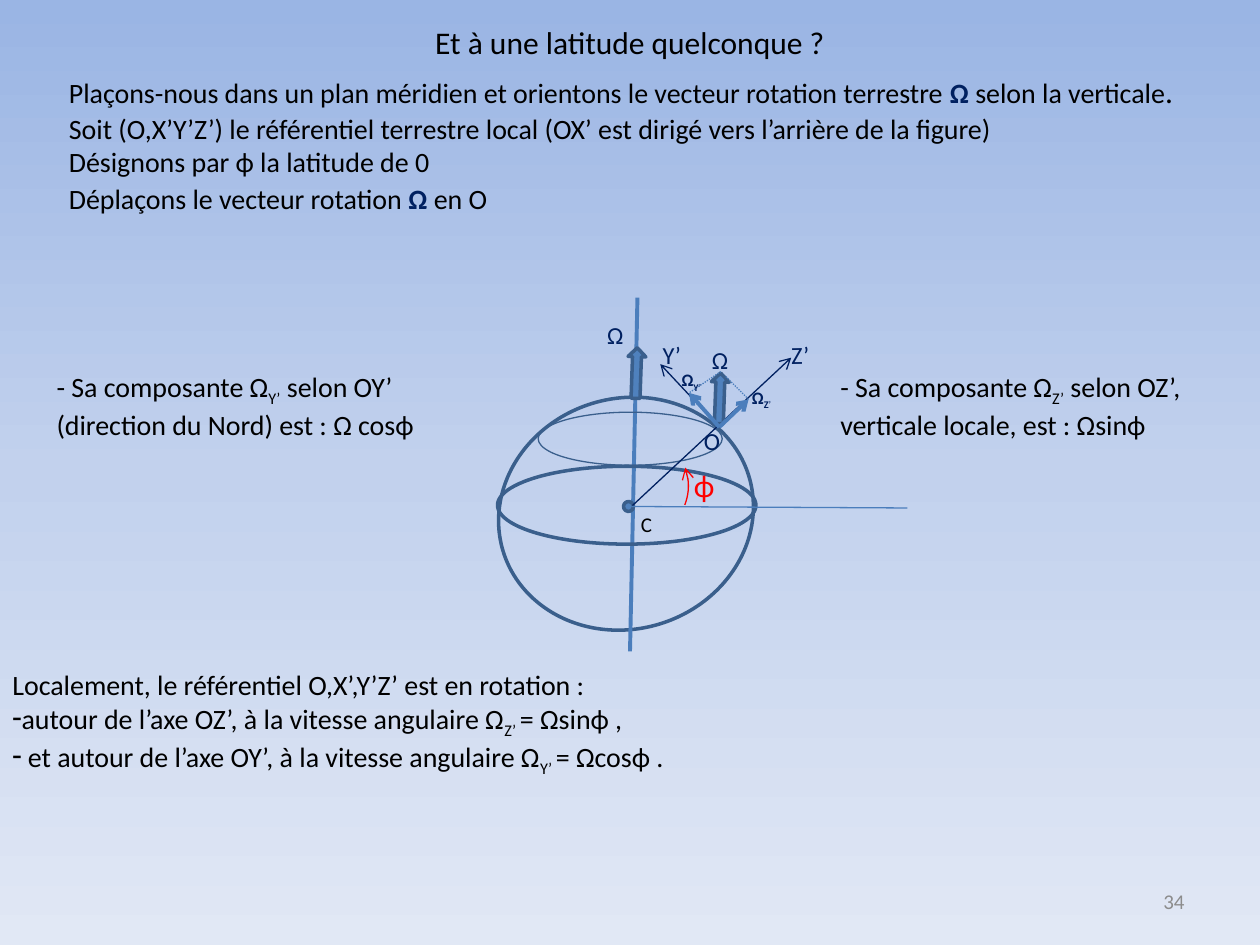
from copy import deepcopy

from lxml import etree
from pptx import Presentation
from pptx.dml.color import RGBColor
from pptx.enum.dml import MSO_LINE
from pptx.enum.shapes import MSO_CONNECTOR, MSO_SHAPE
from pptx.enum.text import MSO_ANCHOR, MSO_AUTO_SIZE, PP_ALIGN
from pptx.oxml.ns import qn
from pptx.util import Cm, Pt

STRAIGHT = MSO_CONNECTOR.STRAIGHT
OVAL, ARROW, ARC = MSO_SHAPE.OVAL, MSO_SHAPE.RIGHT_ARROW, MSO_SHAPE.ARC
LEFT, CENTER, RIGHT = PP_ALIGN.LEFT, PP_ALIGN.CENTER, PP_ALIGN.RIGHT
TOP, MIDDLE = MSO_ANCHOR.TOP, MSO_ANCHOR.MIDDLE
FIT = MSO_AUTO_SIZE.SHAPE_TO_FIT_TEXT
DOTTED = MSO_LINE.ROUND_DOT

BLACK, NAVY, RED, GREY = "000000", "002060", "FF0000", "8C8C8C"
FILL_BLUE, OUTLINE_BLUE, LINE_BLUE = "4F81BD", "3A5F8C", "4B7EBC"
SKY = [(0, "9AB5E4"), (0.5, "C2D1ED"), (1, "E1E8F5")]
SUB = {"baseline": -25000}
OMEGA = ("Ω ", {"color": NAVY, "bold": True})


def rgb(code):
    return RGBColor.from_string(code)


def paint_background(slide):
    fill = slide.background.fill
    fill.gradient()
    fill.gradient_angle = 270
    stops = slide.element.find(".//" + qn("a:gsLst"))
    stops.append(deepcopy(stops[0]))
    for stop, (position, code) in zip(fill.gradient_stops, SKY):
        stop.position = position
        stop.color.rgb = rgb(code)


def add_run(paragraph, wording, size, color, bold=False, baseline=0):
    run = paragraph.add_run()
    run.text = wording
    for name, value in {"name": "Calibri", "size": Pt(size), "bold": bold}.items():
        setattr(run.font, name, value)
    run.font.color.rgb = rgb(color)
    if baseline:
        run.font._element.set("baseline", str(baseline))


def add_text(slide, box, paragraphs, size=16, color=BLACK, align=LEFT,
             wrap=True, bullets=(), **frame_format):
    label = slide.shapes.add_textbox(*map(Cm, box))
    frame = label.text_frame
    settings = {"word_wrap": wrap, "auto_size": FIT, "vertical_anchor": TOP}
    for name, value in {**settings, **frame_format}.items():
        setattr(frame, name, value)
    for index, pieces in enumerate(paragraphs):
        paragraph = frame.paragraphs[0] if index == 0 else frame.add_paragraph()
        paragraph.alignment = align
        if index in bullets:
            properties = paragraph._p.get_or_add_pPr()
            etree.SubElement(properties, qn("a:buChar")).set("char", "-")
        for piece in pieces:
            wording, changes = (piece, {}) if isinstance(piece, str) else piece
            add_run(paragraph, wording, **{"size": size, "color": color, **changes})
    return label


def add_arrowhead(line, end):
    etree.SubElement(line._get_or_add_ln(), qn("a:" + end)).set("type", "arrow")


def add_line(slide, origin, start, stop, color, width, arrow=False, dash=None):
    left, top = origin
    points = (left + start[0], top + start[1], left + stop[0], top + stop[1])
    segment = slide.shapes.add_connector(STRAIGHT, *map(Cm, points))
    segment.line.color.rgb = rgb(color)
    segment.line.width = Pt(width)
    if dash:
        segment.line.dash_style = dash
    if arrow:
        add_arrowhead(segment.line, "tailEnd")
    etree.SubElement(segment._element.spPr, qn("a:effectLst"))


def add_figure(slide, origin, preset, place, color=OUTLINE_BLUE, width=2,
               fill=None, rotation=0):
    left, top, across, down = place
    box = (origin[0] + left, origin[1] + top, across, down)
    figure = slide.shapes.add_shape(preset, *map(Cm, box))
    figure.shadow.inherit = False
    figure.rotation = rotation
    if fill:
        figure.fill.solid()
        figure.fill.fore_color.rgb = rgb(fill)
    else:
        figure.fill.background()
    figure.line.color.rgb = rgb(color)
    figure.line.width = Pt(width)
    return figure


def draw_intro(slide, box):
    left, top, width, height = box
    rows = [
        (0, ["Plaçons-nous dans un plan méridien et orientons le vecteur rotation terrestre ",
             OMEGA, "selon la verticale", (".", {"size": 18})]),
        (0.81, ["Soit (O,X’Y’Z’) le référentiel terrestre local "
                "(OX’ est dirigé vers l’arrière de la figure)"]),
        (1.47, ["Désignons par ϕ la latitude de 0"]),
        (2.21, ["Déplaçons le vecteur rotation ", OMEGA, "en O"]),
    ]
    for offset, pieces in rows:
        add_text(slide, (left, top + offset, width, height), [pieces], margin_left=Cm(1.39))


def draw_globe(slide, origin):
    add_figure(slide, origin, OVAL, (0.03, 2.03, 5.18, 4.65), rotation=343)
    add_line(slide, origin, (2.85, 0), (2.7, 7.13), LINE_BLUE, 2.25)
    add_figure(slide, origin, OVAL, (0.03, 3.4, 5.21, 1.57))
    add_figure(slide, origin, OVAL, (0.85, 2.31, 3.71, 1.07), width=0.75)
    add_figure(slide, origin, OVAL, (2.57, 4.11, 0.2, 0.2), fill=FILL_BLUE, rotation=334)
    add_line(slide, origin, (2.73, 4.21), (8.29, 4.24), LINE_BLUE, 0.75)
    latitude = add_figure(slide, origin, ARC, (1.71, 2.71, 2.16, 2.18), RED, 0.75, rotation=50)
    latitude.adjustments[0] = 173.988
    latitude.adjustments[1] = 198.308
    add_arrowhead(latitude.line, "headEnd")


def draw_vectors(slide, origin):
    place_o = (4.5, 2.61)
    for start, stop in [(place_o, (3.31, 1.34)), ((2.75, 4.19), (5.95, 1.21))]:
        add_line(slide, origin, start, stop, NAVY, 0.75, arrow=True)
    for left, top in [(2.32, 1.34), (4, 1.85)]:
        add_figure(slide, origin, ARROW, (left, top, 1.02, 0.36), fill=FILL_BLUE, rotation=272)
    for corner, projection in [((4.63, 1.59), (5.09, 2.05)), ((4.53, 1.49), (3.89, 1.92))]:
        add_line(slide, origin, corner, projection, LINE_BLUE, 0.75, dash=DOTTED)
        add_line(slide, origin, place_o, projection, LINE_BLUE, 2.25, arrow=True)


def draw_labels(slide, origin):
    labels = [
        ("Y’", (3.11, 0.73, 0.89, 0.86), 14, NAVY, 0),
        ("Z’", (5.7, 0.73, 0.89, 0.86), 14, NAVY, 359),
        ("O", (3.94, 2.46, 0.84, 0.86), 14, NAVY, 0),
        ("C", (2.67, 4.19, 0.79, 0.76), 12, BLACK, 0),
        ("Ω", (1.99, 0.32, 0.94, 0.84), 14, NAVY, 0),
        ("Ω", (4.1, 0.83, 0.94, 0.84), 14, NAVY, 0),
        ("ϕ", (3.74, 3.27, 0.89, 1.02), 18, RED, 0),
    ]
    for wording, (left, top, width, height), size, color, rotation in labels:
        box = (origin[0] + left, origin[1] + top, width, height)
        label = add_text(slide, box, [[wording]], size, color, wrap=False)
        label.rotation = rotation
    for axis, left, top, width in [("Z", 4.91, 1.67, 1.19), ("Y", 3.49, 1.32, 0.97)]:
        pieces = [("Ω", {"bold": True}), (axis, {"bold": True, **SUB}), ("’", SUB)]
        box = (origin[0] + left, origin[1] + top, width, 0.69)
        add_text(slide, box, [pieces], 10, NAVY, wrap=False)


def draw_component(slide, box, axis, description):
    add_text(slide, box, [["- Sa composante Ω", (axis, SUB), description]])


def draw_conclusion(slide, box):
    add_text(slide, box, [
        ["Localement, le référentiel O,X’,Y’Z’ est en rotation :"],
        ["autour de l’axe OZ’, à la vitesse angulaire Ω", ("Z’ ", SUB), "= Ωsinϕ ,"],
        [" et autour de l’axe OY’, à la vitesse angulaire Ω", ("Y’ ", SUB), "= Ωcosϕ ."],
    ], bullets=(1, 2))


def main():
    deck = Presentation()
    deck.slide_width, deck.slide_height = Cm(25.4), Cm(19.05)
    slide = deck.slides.add_slide(deck.slide_layouts[6])
    paint_background(slide)
    add_text(slide, (0, 0.33, 25.4, 1.02), [["Et à une latitude quelconque ?"]], 18, align=CENTER)
    draw_intro(slide, (0, 1.32, 25.4, 0.94))
    diagram = (10, 6)
    draw_globe(slide, diagram)
    draw_vectors(slide, diagram)
    draw_labels(slide, diagram)
    draw_component(slide, (0.89, 7.32, 8.8, 1.63), "Y’",
                   " selon OY’ (direction du Nord) est : Ω cosϕ")
    draw_component(slide, (16.69, 7.32, 8.2, 2.39), "Z’",
                   " selon OZ’, verticale locale, est : Ωsinϕ")
    draw_conclusion(slide, (0, 13.34, 25.4, 3))
    add_text(slide, (18.21, 17.65, 5.92, 1.02), [["34"]], 12, GREY, RIGHT,
             vertical_anchor=MIDDLE, auto_size=MSO_AUTO_SIZE.NONE)
    deck.save("out.pptx")


if __name__ == "__main__":
    main()
